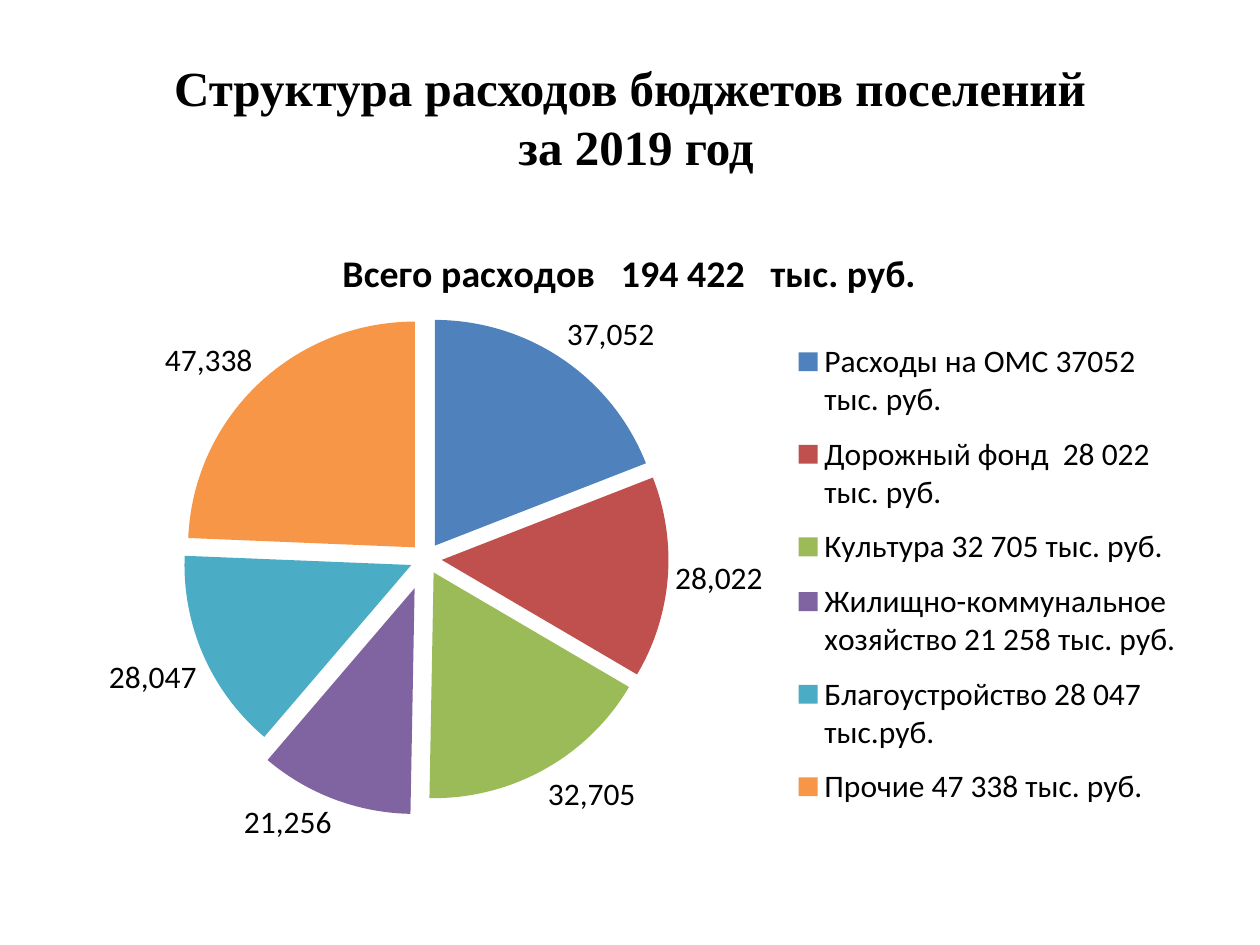
import pptx
import pptx.chart.data
import pptx.dml.color
import pptx.enum.chart
import pptx.enum.text
import pptx.oxml
import pptx.oxml.ns
import pptx.util

Inches = pptx.util.Inches
Pt = pptx.util.Pt
RGB = pptx.dml.color.RGBColor.from_string

HUES = {"text": "000000", "blue": "4F81BD", "red": "C0504D", "green": "9BBB59",
        "violet": "8064A2", "aqua": "4BACC6", "orange": "F79646"}

# legend entry, value, colour, distance from the centre in percent
PARTS = [
    ("Расходы на ОМС 37052 тыс. руб.", 37052, "blue", 7),
    ("Дорожный фонд  28 022 тыс. руб.", 28022, "red", 7),
    ("Культура 32 705 тыс. руб.", 32705, "green", 7),
    ("Жилищно-коммунальное хозяйство 21 258 тыс. руб.", 21256, "violet", 14),
    ("Благоустройство 28 047 тыс.руб.", 28047, "aqua", 7),
    ("Прочие 47 338 тыс. руб.", 47338, "orange", 7),
]


def style(font, name, size, bold):
    font.name = name
    font.size = Pt(size)
    font.bold = bold
    font.color.rgb = RGB(HUES["text"])


def place(node, x, y, w, h, inner=False):
    """Give a chart part a fixed place, in fractions of the chart."""
    for old in node.findall(pptx.oxml.ns.qn("c:layout")):
        node.remove(old)
    target = '<c:layoutTarget val="inner"/>' if inner else ""
    sizes = "".join(f'<c:{tag} val="{val}"/>' for tag, val in zip("xywh", (x, y, w, h)))
    layout = pptx.oxml.parse_xml(
        f'<c:layout {pptx.oxml.ns.nsdecls("c")}><c:manualLayout>{target}'
        f'<c:xMode val="edge"/><c:yMode val="edge"/>{sizes}</c:manualLayout></c:layout>')
    node.insert(0 if inner else 1, layout)


deck = pptx.Presentation()
deck.slide_width = Inches(10)
deck.slide_height = Inches(7.5)
slide = deck.slides.add_slide(deck.slide_layouts[6])

# Heading
box = slide.shapes.add_textbox(Inches(0.5), Inches(0.3), Inches(9), Inches(1.25))
frame = box.text_frame
frame.word_wrap = True
frame.vertical_anchor = pptx.enum.text.MSO_ANCHOR.MIDDLE
para = frame.paragraphs[0]
para.alignment = pptx.enum.text.PP_ALIGN.CENTER
for row, text in enumerate(["Структура расходов бюджетов поселений", " за 2019 год"]):
    if row:
        para.add_line_break()
    run = para.add_run()
    run.text = text
    style(run.font, "Times New Roman", 28, True)

# Pie chart
data = pptx.chart.data.CategoryChartData(number_format="#,##0")
data.categories = [part[0] for part in PARTS]
data.add_series("Расходы", [part[1] for part in PARTS])
chart = slide.shapes.add_chart(
    pptx.enum.chart.XL_CHART_TYPE.PIE,
    Inches(0.5), Inches(1.75), Inches(9), Inches(4.95), data).chart
style(chart.font, "Calibri", 18, False)

chart.has_title = True
run = chart.chart_title.text_frame.paragraphs[0].add_run()
run.text = "Всего расходов   194 422   тыс. руб."
style(run.font, "Calibri", 21.6, True)
chart.chart_title.include_in_layout = False

chart.has_legend = True
chart.legend.position = pptx.enum.chart.XL_LEGEND_POSITION.RIGHT
chart.legend.include_in_layout = False
style(chart.legend.font, "Calibri", 18, False)

plot = chart.plots[0]
plot.vary_by_categories = True
plot.has_data_labels = True
labels = plot.data_labels
labels.show_value = True
labels.show_percentage = False
labels.number_format = "#,##0"
labels.number_format_is_linked = False
labels.position = pptx.enum.chart.XL_LABEL_POSITION.OUTSIDE_END
style(labels.font, "Calibri", 18, False)

for index, (_, _, hue, gap) in enumerate(PARTS):
    fill = plot.series[0].points[index].format.fill
    fill.solid()
    fill.fore_color.rgb = RGB(HUES[hue])
    point = plot.series[0]._element.findall(pptx.oxml.ns.qn("c:dPt"))[index]
    point.find(pptx.oxml.ns.qn("c:spPr")).addprevious(pptx.oxml.parse_xml(
        f'<c:explosion {pptx.oxml.ns.nsdecls("c")} val="{gap}"/>'))

area = chart._chartSpace.chart.plotArea
place(area, 0.12, 0.18, 0.4, 0.73, inner=True)
place(chart.legend._element, 0.64, 0.17, 0.35, 0.8)

deck.save("out.pptx")
